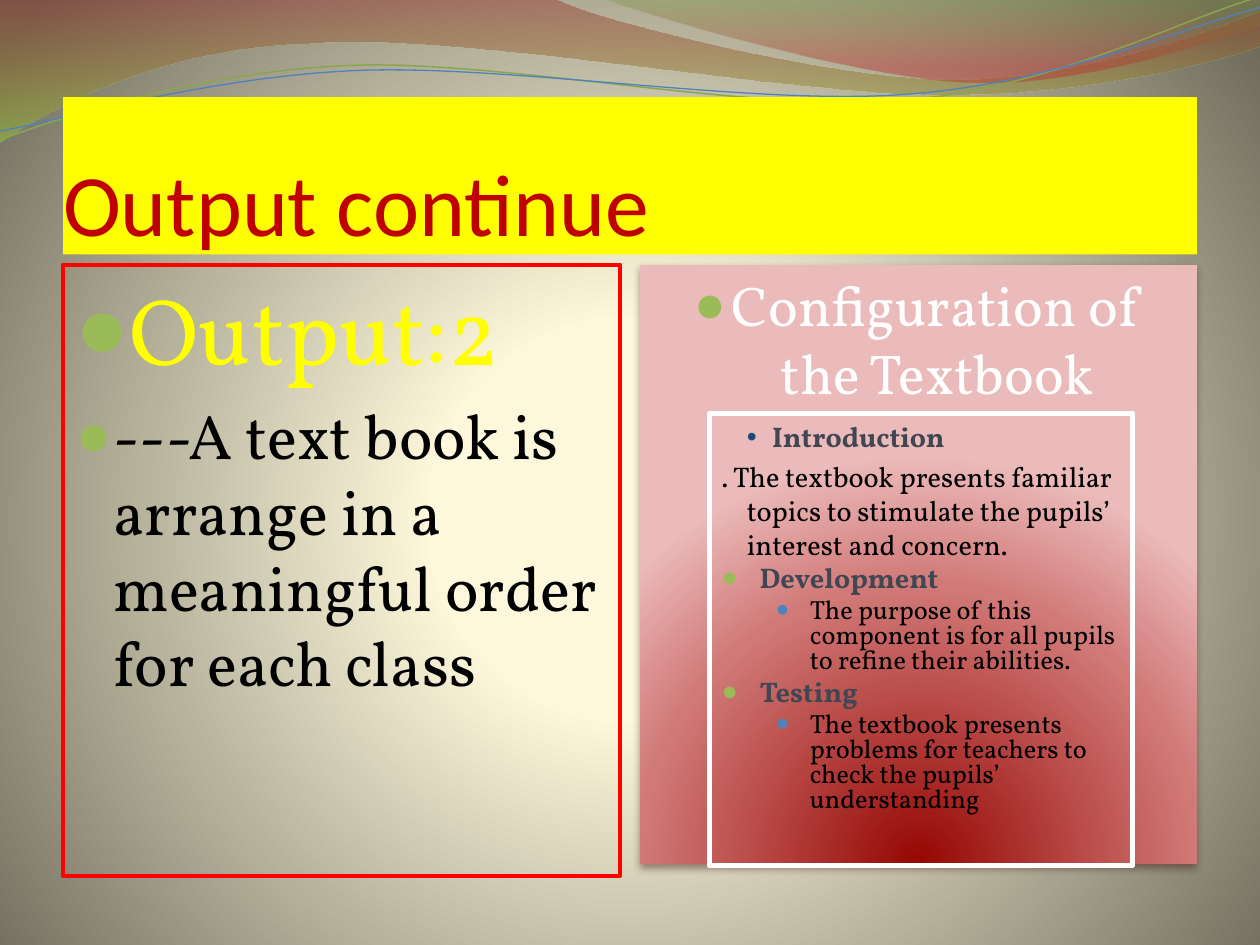
from math import cos, radians, sin

from lxml import etree
from pptx import Presentation
from pptx.dml.color import RGBColor
from pptx.enum.shapes import MSO_SHAPE
from pptx.enum.text import MSO_ANCHOR as ANCHOR, MSO_AUTO_SIZE as AUTO, PP_ALIGN as ALIGN
from pptx.oxml import parse_xml
from pptx.oxml.ns import nsdecls, qn
from pptx.util import Inches, Pt

C = {
    "yellow": "FFFF00", "title": "C00000", "red": "FF0000", "white": "FFFFFF",
    "black": "000000", "heading": "414752", "green": "9BBB59", "blue": "4F81BD",
    "navy": "1F497D", "olive": "89A54F", "shadow": "441B1A",
}
SERIF = "Vollkorn"

# Gradient stops: position %, colour, opacity %
BACKGROUND = [(0, "FFF9DA", 100), (25, "FDF7DB", 100), (100, "6F6C5C", 100)]
PANEL = [(0, "960703", 100), (68, "D07977", 100), (100, "EBBABA", 100)]

# Each segment is one point (straight line) or three points (Bezier curve)
WAVES = [
    ([[(0, 0)], [(4.4, -0.01)],
      [(4.76, 0.17), (6.64, 0.63), (7.58, 0.63)],
      [(8.53, 0.63), (9.58, 0.26), (10, 0.09)], [(10.01, 0.36)],
      [(9.83, 0.44), (8.7, 0.76), (7.46, 0.75)],
      [(6.22, 0.75), (3.82, 0.28), (2.57, 0.34)],
      [(1.29, 0.36), (0.46, 0.83), (-0.01, 1.13)], [(0, 0)]],
     [(0, "973330", 45), (100, "95C238", 55)]),
    ([[(4.79, -0.01)],
      [(5.09, 0.11), (6.82, 0.62), (7.69, 0.65)],
      [(8.56, 0.69), (9.61, 0.32), (10, 0.21)], [(10, 0)], [(4.79, -0.01)]],
     [(0, "769537", 30), (80, "BE3330", 45)]),
]
TILT = 2.7
STRANDS = [  # segments, center, colour, width
    ([[(0, 1.11)],
      [(0.48, 0.93), (1.58, 0.57), (2.77, 0.52)],
      [(3.95, 0.47), (5.93, 0.89), (7.13, 0.8)],
      [(8.33, 0.71), (9.38, 0.15), (9.98, -0.02)]], (4.99, 0.58), "olive", 0.85),
    ([[(0, 1.04)],
      [(0.47, 0.96), (1.64, 0.61), (2.83, 0.56)],
      [(4.03, 0.51), (5.97, 0.84), (7.17, 0.75)],
      [(8.36, 0.67), (9.41, 0.21), (10, 0.06)]], (5, 0.59), "blue", 0.75),
]

# Paragraph kinds: left margin, first-line indent, bullet (char, colour, size %)
TOP = dict(margin=0.3, indent=-0.3, bullet=("●", "green", 95))
HEADING = dict(TOP, size=16.2, color="heading", bold=True, spacing=0.8)
DETAIL = dict(level=1, margin=0.7, indent=-0.27, bullet=("●", "blue", 85),
              size=15, color="black", spacing=0.8)
INTRO = dict(level=3, margin=0.4, indent=-0.2, bullet=("•", "navy", 100),
             size=16.2, color="heading", bold=True)
INTRO_TEXT = dict(level=3, margin=0.2, indent=-0.2, size=16.2, color="black")

LEFT = [
    ("Output:2", dict(TOP, size=54, color="yellow")),
    ("---A text book is arrange in a meaningful order for each class",
     dict(TOP, size=36, color="black")),
]
RIGHT = [("Configuration of the Textbook",
          dict(TOP, size=32, color="white", align=ALIGN.CENTER))]
PARTS = [
    ("Introduction", INTRO),
    (". The textbook presents familiar topics to stimulate the pupils’ interest and concern.",
     INTRO_TEXT),
    ("Development", HEADING),
    ("The purpose of this component is for all pupils to refine their abilities.", DETAIL),
    ("Testing", HEADING),
    ("The textbook presents problems for teachers to check the pupils’ understanding", DETAIL),
]


def rgb(name):
    return RGBColor.from_string(C[name])


def set_gradient(fill, holder, stops, center=None):
    """Fill top to bottom, or in circles around center (left, top, right, bottom %)."""
    fill.gradient()
    gs = ""
    for pos, color, opacity in stops:
        alpha = f'<a:alpha val="{opacity * 1000}"/>' if opacity < 100 else ""
        gs += f'<a:gs pos="{pos * 1000}"><a:srgbClr val="{color}">{alpha}</a:srgbClr></a:gs>'
    way = '<a:lin ang="5400000" scaled="0"/>'
    if center:
        l, t, r, b = (v * 1000 for v in center)
        way = (f'<a:path path="circle"><a:fillToRect l="{l}" t="{t}" '
               f'r="{r}" b="{b}"/></a:path>')
    holder.replace(holder.find(qn("a:gradFill")), parse_xml(
        f'<a:gradFill {nsdecls("a")} rotWithShape="1"><a:gsLst>{gs}</a:gsLst>{way}</a:gradFill>'))


def turn(segments, center, degrees):
    a, (cx, cy) = radians(degrees), center
    return [[(cx + (x - cx) * cos(a) - (y - cy) * sin(a),
              cy + (x - cx) * sin(a) + (y - cy) * cos(a)) for x, y in seg]
            for seg in segments]


def add_curve(shapes, segments, close):
    """Build the outline through the segment ends, then bend its lines into curves."""
    ends = [(Inches(x), Inches(y)) for x, y in (seg[-1] for seg in segments)]
    builder = shapes.build_freeform(*ends[0])
    builder.add_line_segments(ends[1:], close=close)
    sp = builder.convert_to_shape()
    lines = list(sp._element.iter(qn("a:lnTo")))
    for line, seg in zip(lines, segments[1:]):
        if len(seg) == 3:
            bend = etree.Element(qn("a:cubicBezTo"))
            for x, y in seg:
                etree.SubElement(bend, qn("a:pt"), x=str(Inches(x) - sp.left),
                                 y=str(Inches(y) - sp.top))
            line.getparent().replace(line, bend)
    sp.shadow.inherit = False
    return sp


def place(sp, left, top, width, height):
    sp.left, sp.top, sp.width, sp.height = map(Inches, (left, top, width, height))


def outline(sp, color, width):
    sp.line.color.rgb = rgb(color)
    sp.line.width = Pt(width)


def style_run(r, font, size, color, bold=False):
    r.font.name, r.font.size, r.font.bold = font, Pt(size), bold
    r.font.color.rgb = rgb(color)


def write(tf, items, auto_size=AUTO.NONE):
    tf.word_wrap = True
    tf.auto_size = auto_size
    tf.vertical_anchor = ANCHOR.TOP
    for i, (text, st) in enumerate(items):
        p = tf.add_paragraph() if i else tf.paragraphs[0]
        p.level = st.get("level", 0)
        p.alignment = st.get("align", ALIGN.LEFT)
        p.line_spacing = st.get("spacing", 1.0)
        pPr = p._p.get_or_add_pPr()
        pPr.set("marL", str(Inches(st["margin"])))
        pPr.set("indent", str(Inches(st["indent"])))
        before = etree.SubElement(pPr, qn("a:spcBef"))
        etree.SubElement(before, qn("a:spcPct"), val="20000")
        if "bullet" in st:
            char, color, size = st["bullet"]
            clr = etree.SubElement(pPr, qn("a:buClr"))
            etree.SubElement(clr, qn("a:srgbClr"), val=C[color])
            etree.SubElement(pPr, qn("a:buSzPct"), val=str(size * 1000))
            etree.SubElement(pPr, qn("a:buFont"), typeface="Arial")
            etree.SubElement(pPr, qn("a:buChar"), char=char)
        r = p.add_run()
        r.text = text
        style_run(r, SERIF, st["size"], st["color"], st.get("bold", False))


prs = Presentation()
prs.slide_width, prs.slide_height = Inches(10), Inches(7.5)
s = prs.slides.add_slide(prs.slide_layouts[3])
title, left, right = s.placeholders

bg_fill = s.background.fill
set_gradient(bg_fill, s._element.cSld.find(qn("p:bg")).find(qn("p:bgPr")),
             BACKGROUND, (10, 110, 10, 100))

for segments, stops in WAVES:
    sp = add_curve(s.shapes, segments, True)
    set_gradient(sp.fill, sp._element.spPr, stops)
    sp.line.fill.background()
for segments, center, color, width in STRANDS:
    sp = add_curve(s.shapes, turn(segments, center, TILT), False)
    sp.rotation = 360 - TILT
    sp.fill.background()
    outline(sp, color, width)

# Bring the placeholders in front of the waves
for sp in (title, left, right):
    s.shapes._spTree.append(sp._element)

place(title, 0.5, 0.77, 9, 1.25)
title.fill.solid()
title.fill.fore_color.rgb = rgb("yellow")
tf = title.text_frame
tf.auto_size = AUTO.NONE
tf.vertical_anchor = ANCHOR.BOTTOM
tf.margin_left = tf.margin_right = tf.margin_bottom = 0
tf.margin_top = Inches(0.05)
p = tf.paragraphs[0]
p.alignment = ALIGN.LEFT
r = p.add_run()
r.text = "Output continue"
style_run(r, "Calibri", 50, "title")

place(left, 0.5, 2.1, 4.42, 4.85)
outline(left, "red", 2.25)
write(left.text_frame, LEFT)

place(right, 5.08, 2.1, 4.42, 4.85)
set_gradient(right.fill, right._element.spPr, PANEL, (50, 130, 50, -30))
right._element.spPr.append(parse_xml(
    f'<a:effectLst {nsdecls("a")}><a:outerShdw blurRad="{Pt(4.5)}" dist="{Pt(3)}" '
    f'dir="5400000" rotWithShape="0"><a:srgbClr val="{C["shadow"]}">'
    '<a:alpha val="48000"/></a:srgbClr></a:outerShdw></a:effectLst>'))
write(right.text_frame, RIGHT, AUTO.SHAPE_TO_FIT_TEXT)

box = s.shapes.add_shape(MSO_SHAPE.RECTANGLE, *map(Inches, (5.63, 3.28, 3.36, 3.59)))
box.shadow.inherit = False
box.fill.background()
outline(box, "white", 3)
write(box.text_frame, PARTS)

prs.save("out.pptx")
